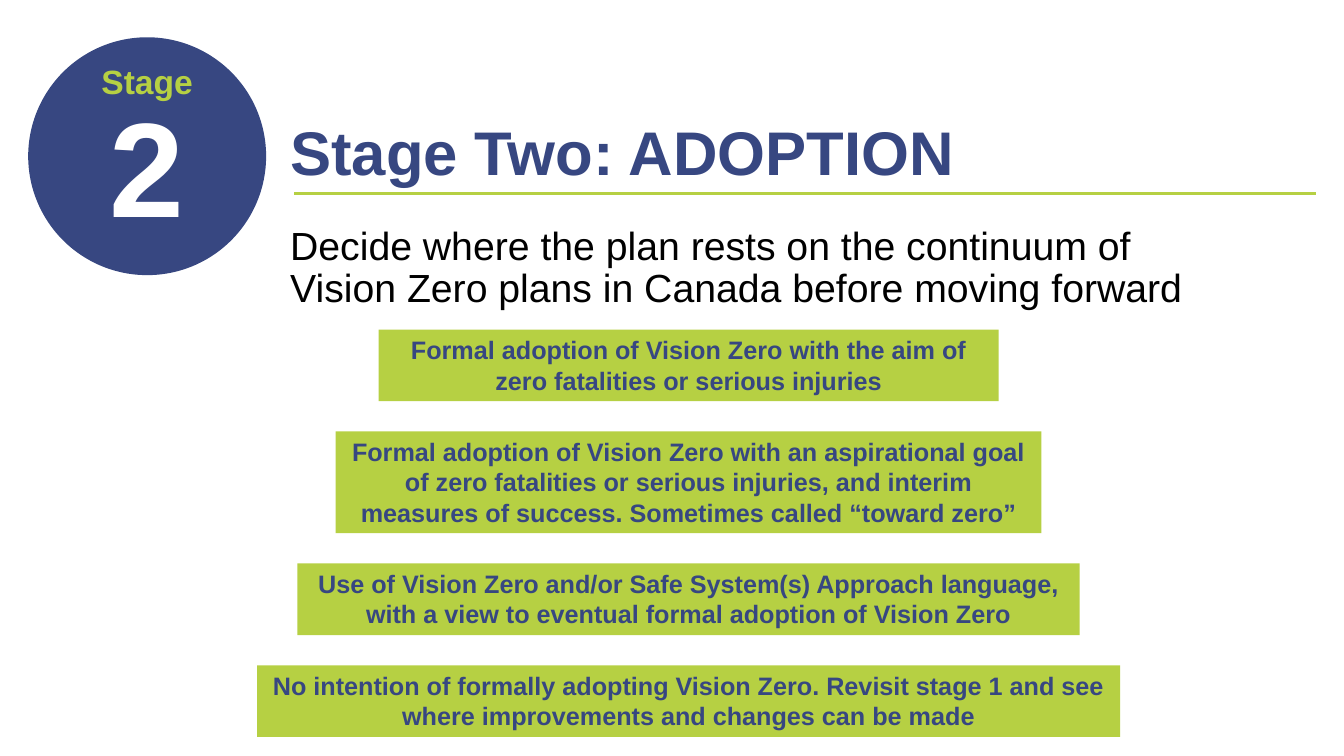
from lxml.etree import SubElement
from pptx import Presentation
from pptx.dml.color import RGBColor
from pptx.enum.shapes import MSO_CONNECTOR, MSO_SHAPE
from pptx.enum.text import MSO_ANCHOR, PP_ALIGN
from pptx.oxml.ns import qn
from pptx.util import Inches, Pt

NAVY, LIME, WHITE, BLACK = "374781", "B6D043", "FFFFFF", "000000"


def color(code):
    return RGBColor.from_string(code)


class Page:
    font = "Arial"

    def __init__(self, slide):
        self.slide = slide

    def label(self, shape, lines, anchor=MSO_ANCHOR.TOP, align=PP_ALIGN.LEFT, space=1.0):
        """Fill a shape with lines given as (text, size, colour, bold)."""
        frame = shape.text_frame
        frame.word_wrap = True
        frame.vertical_anchor = anchor
        frame.text = "\n".join(line[0] for line in lines)
        for para, (_, size, code, bold) in zip(frame.paragraphs, lines):
            para.alignment = align
            para.line_spacing = space
            font = para.runs[0].font
            font.name, font.size, font.bold = self.font, Pt(size), bold
            font.color.rgb = color(code)

    def shape(self, kind, box, fill, lines, **style):
        item = self.slide.shapes.add_shape(kind, *map(Inches, box))
        item.shadow.inherit = False
        item.fill.solid()
        item.fill.fore_color.rgb = color(fill)
        item.line.fill.background()
        self.label(item, lines, align=PP_ALIGN.CENTER, **style)

    def text(self, box, lines, **style):
        item = self.slide.shapes.add_textbox(*map(Inches, box))
        self.label(item, lines, space=0.9, **style)
        return item

    def rule(self, left, right, top):
        ends = map(Inches, (left, top, right, top))
        item = self.slide.shapes.add_connector(MSO_CONNECTOR.STRAIGHT, *ends)
        item.line.color.rgb = color(LIME)
        item.line.width = Pt(2)
        SubElement(item._element.spPr, qn("a:effectLst"))


def main():
    deck = Presentation()
    deck.slide_width, deck.slide_height = Inches(13.33), Inches(7.5)
    page = Page(deck.slides.add_slide(deck.slide_layouts[6]))

    # Stage badge and title
    page.rule(2.92, 13.05, 1.92)
    page.shape(MSO_SHAPE.OVAL, (0.28, 0.37, 2.36, 2.36), NAVY,
               [("Stage", 24, LIME, True), ("2", 96, WHITE, True)],
               anchor=MSO_ANCHOR.MIDDLE, space=0.9)
    page.text((2.78, 0.47, 10.28, 1.45),
              [("Stage Two: ADOPTION", 44, NAVY, True)], anchor=MSO_ANCHOR.BOTTOM)

    # Lead sentence
    lead = page.text((2.78, 2.2, 9.64, 4.76), [
        ("Decide where the plan rests on the continuum of "
         "Vision Zero plans in Canada before moving forward", 28, BLACK, False)])
    para = lead.text_frame.paragraphs[0]
    para.space_before, para.space_after = Pt(10), Pt(12)

    # Continuum bars: width, number of text lines, wording
    bars = [
        (6.15, 2, "Formal adoption of Vision Zero with the aim of "
                  "zero fatalities or serious injuries"),
        (7, 3, "Formal adoption of Vision Zero with an aspirational goal "
               "of zero fatalities or serious injuries, and interim "
               "measures of success. Sometimes called “toward zero”"),
        (7.76, 2, "Use of Vision Zero and/or Safe System(s) Approach language, "
                  "with a view to eventual formal adoption of Vision Zero"),
        (8.56, 2, "No intention of formally adopting Vision Zero. Revisit stage 1 "
                  "and see where improvements and changes can be made"),
    ]
    mid, top, gap = 6.83, 3.27, 0.3
    for width, count, words in bars:
        height = 0.11 + 0.3 * count
        page.shape(MSO_SHAPE.RECTANGLE, (mid - width / 2, top, width, height),
                   LIME, [(words, 18, NAVY, True)])
        top += height + gap

    deck.save("out.pptx")


if __name__ == "__main__":
    main()
